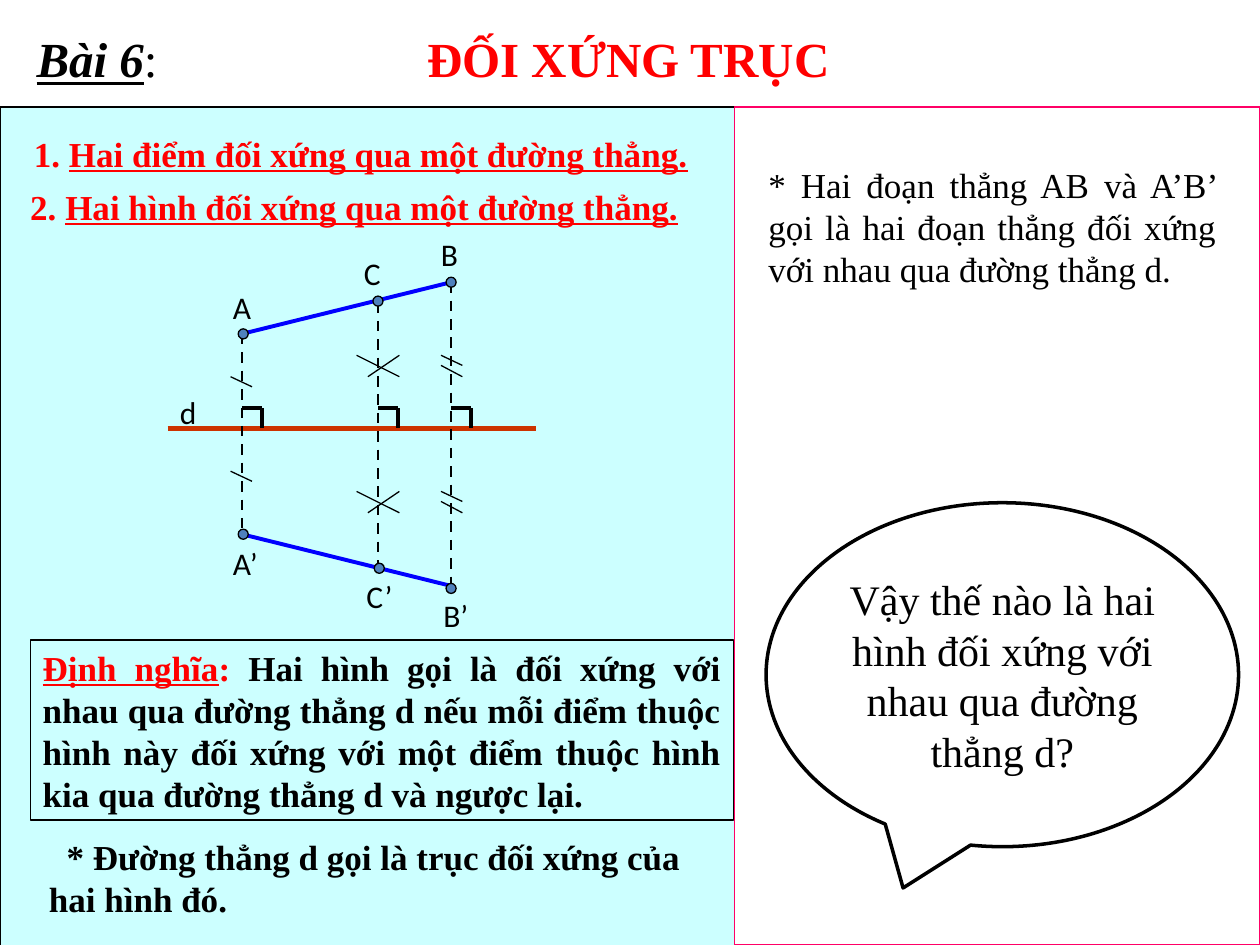
"""Build the lesson slide on axial symmetry of two figures."""
from dataclasses import dataclass

from lxml.etree import SubElement
from pptx import Presentation
from pptx.dml.color import RGBColor
from pptx.enum.dml import MSO_LINE
from pptx.enum.shapes import MSO_CONNECTOR, MSO_SHAPE
from pptx.enum.text import MSO_ANCHOR, MSO_AUTO_SIZE, PP_ALIGN
from pptx.oxml.ns import qn
from pptx.util import Inches, Pt


@dataclass(frozen=True)
class Theme:
    black: str = "000000"
    white: str = "FFFFFF"
    red: str = "FF0000"
    blue: str = "0000FF"
    axis: str = "CC3300"
    dot: str = "4F81BD"
    panel: str = "CCFFFF"
    frame: str = "FF0066"
    serif: str = "Times New Roman"
    sans: str = "Calibri"
    title: int = 28
    question: int = 24
    body: int = 20
    label: int = 18


def add_run(p, text, font, size, color, bold=False, italic=False, underline=False):
    r = p.add_run()
    r.text = text
    f = r.font
    f.name, f.size = font, Pt(size)
    f.bold, f.italic, f.underline = bold, italic, underline
    f.color.rgb = RGBColor.from_string(color)


class SlideBuilder:
    def __init__(self, s, theme):
        self.s, self.theme = s, theme

    def shape(self, kind, x, y, w, h, fill=None, line=None, width=0.75):
        sp = self.s.shapes.add_shape(kind, Inches(x), Inches(y), Inches(w), Inches(h))
        sp.shadow.inherit = False
        if fill:
            sp.fill.solid()
            sp.fill.fore_color.rgb = RGBColor.from_string(fill)
        else:
            sp.fill.background()
        sp.line.color.rgb = RGBColor.from_string(line or self.theme.black)
        sp.line.width = Pt(width)
        return sp

    def line(self, x1, y1, x2, y2, color=None, width=0.75, dash=False):
        c = self.s.shapes.add_connector(
            MSO_CONNECTOR.STRAIGHT, Inches(x1), Inches(y1), Inches(x2), Inches(y2))
        c.line.color.rgb = RGBColor.from_string(color or self.theme.black)
        c.line.width = Pt(width)
        if dash:
            c.line.dash_style = MSO_LINE.DASH
        SubElement(c._element.spPr, qn("a:effectLst"))

    def fill_text(self, sp, runs, align=PP_ALIGN.LEFT, anchor=MSO_ANCHOR.TOP, grow=True):
        tf = sp.text_frame
        tf.word_wrap = True
        tf.vertical_anchor = anchor
        tf.auto_size = MSO_AUTO_SIZE.SHAPE_TO_FIT_TEXT if grow else MSO_AUTO_SIZE.NONE
        p = tf.paragraphs[0]
        p.alignment = align
        base = dict(font=self.theme.serif, size=self.theme.body, color=self.theme.black)
        for text, style in runs:
            add_run(p, text, **{**base, **style})
        return p

    def text(self, x, y, w, h, runs, inset=0.1, **layout):
        sp = self.s.shapes.add_textbox(Inches(x), Inches(y), Inches(w), Inches(h))
        sp.text_frame.margin_left = Inches(inset)
        return self.fill_text(sp, runs, **layout)

    def dot(self, x, y, d=0.08):
        self.shape(MSO_SHAPE.OVAL, x - d / 2, y - d / 2, d, d, self.theme.dot)

    def right_angle(self, x, y, side=0.16):
        self.line(x, y - side, x + side, y - side, width=2)
        self.line(x + side, y - side, x + side, y, width=2)


def draw_panels(b):
    t = b.theme
    b.shape(MSO_SHAPE.RECTANGLE, 0, 0.85, 5.83, 6.83, t.panel)
    heading = dict(color=t.red, bold=True)
    definition = b.shape(MSO_SHAPE.RECTANGLE, 0.24, 5.08, 5.58, 1.43)
    b.fill_text(definition, [
        ("Định nghĩa", dict(heading, underline=True)),
        (": ", heading),
        ("Hai hình gọi là đối xứng với nhau qua đường thẳng d nếu mỗi điểm thuộc hình này "
         "đối xứng với một điểm thuộc hình kia qua đường thẳng d và ngược lại.",
         dict(bold=True))], align=PP_ALIGN.JUSTIFY)
    p = b.text(0.29, 6.58, 5.33, 0.77, [
        ("* Đường thẳng d gọi là trục đối xứng của hai hình đó.", dict(bold=True))])
    p._p.get_or_add_pPr().set("indent", str(Inches(0.14)))
    b.shape(MSO_SHAPE.RECTANGLE, 5.83, 0.85, 4.17, 6.65, t.white, t.frame)
    b.text(6, 1.25, 3.75, 1.1, [
        ("* Hai đoạn thẳng AB và A’B’ gọi là hai đoạn thẳng đối xứng với nhau "
         "qua đường thẳng d.", {})], align=PP_ALIGN.JUSTIFY)
    callout = b.shape(MSO_SHAPE.OVAL_CALLOUT, 6.08, 3.99, 3.75, 2.73, t.white, width=2)
    callout.adjustments[0], callout.adjustments[1] = -0.21, 0.62
    b.fill_text(callout, [("Vậy thế nào là hai hình đối xứng với nhau qua đường thẳng d?",
                           dict(size=t.question))],
                align=PP_ALIGN.CENTER, anchor=MSO_ANCHOR.MIDDLE, grow=False)


def draw_headings(b):
    t = b.theme
    big = dict(size=t.title)
    p = b.text(0, 0.18, 10, 0.57, [
        ("Bài 6", dict(big, bold=True, italic=True, underline=True)),
        (":\t", big),
        ("ĐỐI XỨNG TRỤC", dict(big, color=t.red, bold=True))], inset=0.29)
    tabs = SubElement(p._p.get_or_add_pPr(), qn("a:tabLst"))
    SubElement(tabs, qn("a:tab"), pos=str(Inches(3.1)), algn="l")
    red = dict(color=t.red, bold=True)
    for number, title, x, y, w, inset in (
            ("1. ", "Hai điểm đối xứng qua một đường thẳng.", 0.17, 1, 5.58, 0.1),
            ("2. ", "Hai hình đối xứng qua một đường thẳng.", 0, 1.42, 6, 0.24)):
        b.text(x, y, w, 0.43, [(number, red), (title, dict(red, underline=True))], inset)


def draw_figure(b):
    t = b.theme
    axis_y = 3.4
    b.line(1.33, axis_y, 4.25, axis_y, t.axis, 3)
    for y_a, y_b in ((2.65, 2.24), (4.24, 4.65)):
        b.line(1.92, y_a, 3.58, y_b, t.blue, 2.25)
    for x, top, bottom in ((1.92, 2.65, 4.24), (3, 2.4, 4.49), (3.58, 2.24, 4.65)):
        b.line(x, top, x, bottom, width=1.5, dash=True)
        b.right_angle(x, axis_y)
    ticks = (
        (1.83, 2.99, 2, 3.07, 0.75),
        (3.5, 2.82, 3.67, 2.9, 1.08),
        (3.5, 2.9, 3.67, 2.99, 1.08),
        (2.83, 2.82, 3.17, 2.99, 1.08),
        (3.17, 2.82, 2.92, 2.99, 1.08))
    for x1, y1, x2, y2, drop in ticks:
        for dy in (0, drop):
            b.line(x1, y1 + dy, x2, y2 + dy)
    for x, y in ((1.93, 2.65), (3, 2.39), (3.58, 2.24),
                 (1.93, 4.24), (3.01, 4.51), (3.58, 4.67)):
        b.dot(x, y)
    for name, x, y in (("A", 1.75, 2.24), ("B", 3.4, 1.82), ("C", 2.79, 1.97),
                       ("A’", 1.75, 4.27), ("B’", 3.42, 4.68), ("C’", 2.81, 4.53),
                       ("d", 1.33, 3.07)):
        b.text(x, y, 0.42 if len(name) == 1 else 0.67, 0.4,
               [(name, dict(font=t.sans, size=t.label))])


def main():
    prs = Presentation()
    prs.slide_width, prs.slide_height = Inches(10), Inches(7.5)
    b = SlideBuilder(prs.slides.add_slide(prs.slide_layouts[6]), Theme())
    draw_panels(b)
    draw_figure(b)
    draw_headings(b)
    prs.save("out.pptx")


if __name__ == "__main__":
    main()
